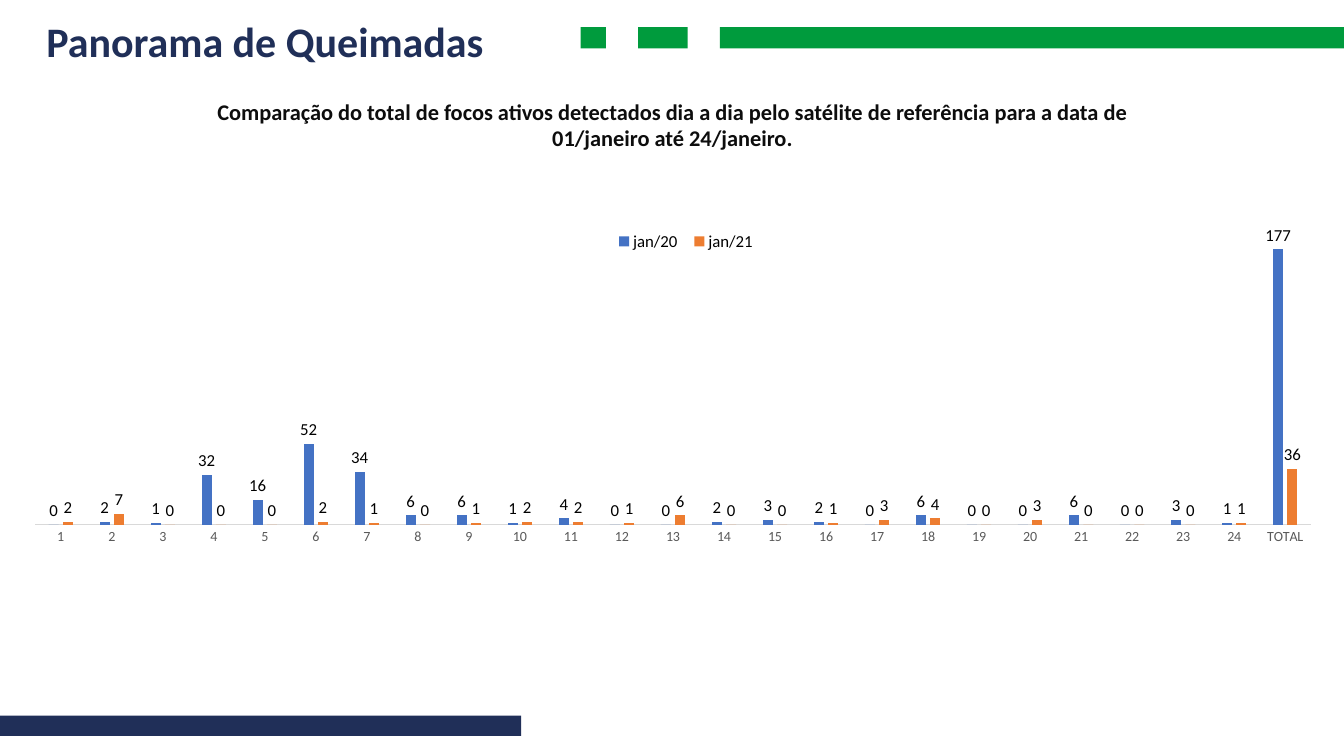
from lxml import etree
from pptx import Presentation
from pptx.chart.data import CategoryChartData
from pptx.dml.color import RGBColor
from pptx.enum.chart import XL_CHART_TYPE, XL_LABEL_POSITION, XL_LEGEND_POSITION, XL_TICK_MARK
from pptx.enum.shapes import MSO_SHAPE
from pptx.enum.text import MSO_ANCHOR, PP_ALIGN
from pptx.oxml.ns import qn
from pptx.util import Inches, Pt

RECTANGLE = MSO_SHAPE.RECTANGLE
CLUSTERED = XL_CHART_TYPE.COLUMN_CLUSTERED
OUTSIDE_END = XL_LABEL_POSITION.OUTSIDE_END
LEGEND_BOTTOM = XL_LEGEND_POSITION.BOTTOM
NO_TICK = XL_TICK_MARK.NONE
TOP = MSO_ANCHOR.TOP
LEFT, CENTER = PP_ALIGN.LEFT, PP_ALIGN.CENTER

COLORS = {
    "green": "009B3D", "navy": "202F58", "ink": "0D0D0D", "black": "000000",
    "gray": "595959", "axis": "D9D9D9", "blue": "4472C4", "orange": "ED7D31",
}
DAYS = [str(day) for day in range(1, 25)] + ["TOTAL"]
FIRES = {
    "jan/20": ("blue", [0, 2, 1, 32, 16, 52, 34, 6, 6, 1, 4, 0, 0,
                        2, 3, 2, 0, 6, 0, 0, 6, 0, 3, 1, 177]),
    "jan/21": ("orange", [2, 7, 0, 0, 0, 2, 1, 0, 1, 2, 2, 1, 6,
                          0, 0, 1, 3, 4, 0, 3, 0, 0, 0, 1, 36]),
}


def apply(target, values):
    for name, value in values.items():
        setattr(target, name, value)


def set_layout(parent, index, values):
    """Place a chart part by fractions of the chart area."""
    for old in parent.findall(qn("c:layout")):
        parent.remove(old)
    layout = etree.Element(qn("c:layout"))
    manual = etree.SubElement(layout, qn("c:manualLayout"))
    for name, value in values.items():
        etree.SubElement(manual, qn(f"c:{name}")).set("val", str(value))
    parent.insert(index, layout)


class Page:
    font_name = "Calibri"

    def __init__(self, deck):
        self.slide = deck.slides.add_slide(deck.slide_layouts[5])

    def color(self, name):
        return RGBColor.from_string(COLORS[name])

    def style(self, font, size, color, bold=False):
        apply(font, {"name": self.font_name, "size": Pt(size), "bold": bold})
        font.color.rgb = self.color(color)

    def bar(self, left, top, width, height, color):
        box = self.slide.shapes.add_shape(RECTANGLE, *map(Inches, (left, top, width, height)))
        box.shadow.inherit = False
        box.fill.solid()
        box.fill.fore_color.rgb = self.color(color)
        box.line.fill.background()

    def fill_text(self, box, text, size, color, align, wrap):
        apply(box.text_frame, {"word_wrap": wrap, "vertical_anchor": TOP})
        para = box.text_frame.paragraphs[0]
        para.alignment = align
        span = para.add_run()
        span.text = text
        self.style(span.font, size, color, bold=True)

    def title(self, text, left, top, width, height):
        box = self.slide.shapes.title
        apply(box, {"left": Inches(left), "top": Inches(top),
                    "width": Inches(width), "height": Inches(height)})
        self.fill_text(box, text, 30, "navy", LEFT, False)

    def text(self, text, left, top, width, height):
        box = self.slide.shapes.add_textbox(*map(Inches, (left, top, width, height)))
        self.fill_text(box, text, 16, "ink", CENTER, True)

    def chart(self, left, top, width, height):
        data = CategoryChartData()
        data.categories = DAYS
        for name, (_, values) in FIRES.items():
            data.add_series(name, values)
        frame = self.slide.shapes.add_chart(
            CLUSTERED, *map(Inches, (left, top, width, height)), data)
        chart = frame.chart
        apply(chart, {"has_title": False, "has_legend": True})
        self.style(chart.font, 10, "black")

        # Axes
        apply(chart.value_axis, {"visible": False, "has_major_gridlines": False,
                                 "minimum_scale": 0, "maximum_scale": 200})
        days = chart.category_axis
        apply(days, {"major_tick_mark": NO_TICK, "minor_tick_mark": NO_TICK})
        self.style(days.tick_labels.font, 10, "gray")
        days.format.line.width = Pt(0.75)
        days.format.line.color.rgb = self.color("axis")

        # Columns and value labels
        plot = chart.plots[0]
        apply(plot, {"gap_width": 267, "overlap": -43, "vary_by_categories": False})
        for series in plot.series:
            series.format.fill.solid()
            series.format.fill.fore_color.rgb = self.color(FIRES[series.name][0])
            labels = series.data_labels
            apply(labels, {"show_value": True, "position": OUTSIDE_END})
            self.style(labels.font, 12, "black")

        # Legend and plot placement
        legend = chart.legend
        apply(legend, {"position": LEGEND_BOTTOM, "include_in_layout": False})
        self.style(legend.font, 12, "black")
        set_layout(legend._element, 1, {"xMode": "edge", "yMode": "edge", "x": 0.45, "y": 0.07,
                                        "w": 0.12, "h": 0.08})
        set_layout(chart._chartSpace.chart.plotArea, 0, {
            "layoutTarget": "inner", "xMode": "edge", "yMode": "edge",
            "x": 0.01, "y": 0.04, "w": 0.98, "h": 0.78})


def main():
    deck = Presentation()
    apply(deck, {"slide_width": Inches(13.33), "slide_height": Inches(7.5)})
    page = Page(deck)

    # Header and footer bars
    for left, width in ((7.14, 6.19), (6.33, 0.49), (5.76, 0.25)):
        page.bar(left, 0.27, width, 0.21, "green")
    page.bar(0, 7.1, 5.17, 0.2, "navy")

    # Heading and chart
    page.title("Panorama de Queimadas", 0.36, 0.1, 4.95, 0.61)
    page.text("Comparação do total de focos ativos detectados dia a dia pelo satélite de "
              "referência para a data de 01/janeiro até 24/janeiro.", 1.92, 0.92, 9.5, 0.64)
    page.chart(0.22, 1.96, 12.91, 3.96)
    deck.save("out.pptx")


if __name__ == "__main__":
    main()
